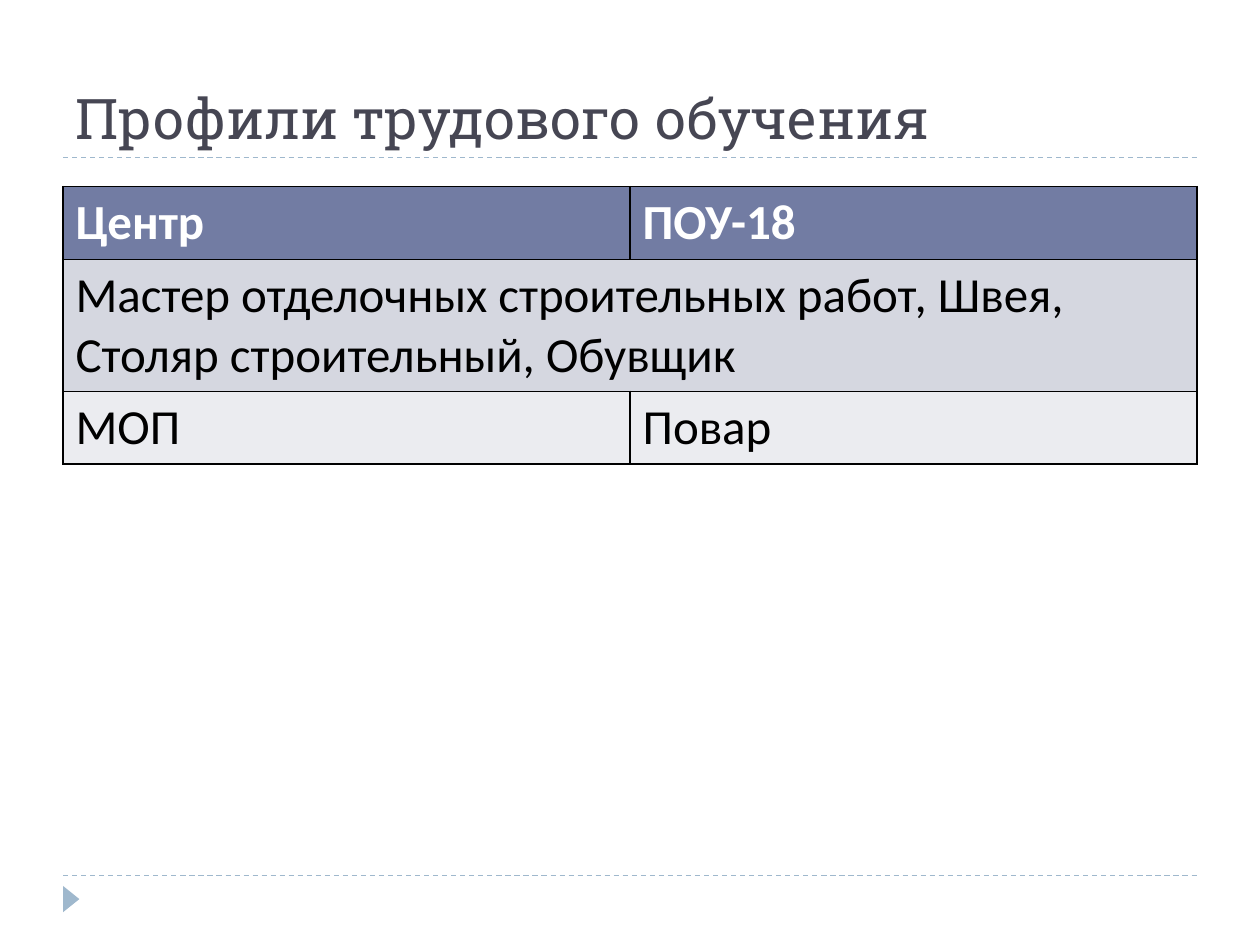
import pptx
import pptx.dml.color
import pptx.enum.dml
import pptx.enum.shapes
import pptx.enum.text
import pptx.oxml
import pptx.oxml.ns
import pptx.util
from pptx.util import Cm

ACCENT = "9FB8CD"
ROWS = [
    (["Центр", "ПОУ-18"], 1.47, "727CA3", "FFFFFF"),
    (["Мастер отделочных строительных работ, Швея, Столяр строительный, Обувщик"],
     2.66, "D5D7E0", "000000"),
    (["МОП", "Повар"], 1.46, "EBECF0", "000000"),
]


def paint(color_format, value):
    """Set a colour format to a hex colour."""
    color_format.rgb = pptx.dml.color.RGBColor.from_string(value)


def fill_solid(item, value):
    """Give a shape or a cell a plain fill."""
    item.fill.solid()
    paint(item.fill.fore_color, value)


def write(frame, text, font, size, color, bold=False):
    """Put one formatted paragraph in a text frame and return it."""
    frame.text = text
    para = frame.paragraphs[0]
    for span in para.runs:
        span.font.name = font
        span.font.size = pptx.util.Pt(size)
        span.font.bold = bold
        paint(span.font.color, color)
    return para


def add_rule(page, left, top, width):
    """Draw a dashed horizontal rule."""
    rule = page.shapes.add_connector(
        pptx.enum.shapes.MSO_CONNECTOR.STRAIGHT, Cm(left), Cm(top), Cm(left + width), Cm(top))
    paint(rule.line.color, ACCENT)
    rule.line.width = pptx.util.Pt(0.75)
    rule.line.dash_style = pptx.enum.dml.MSO_LINE.DASH
    rule._element.spPr.append(pptx.oxml.parse_xml(
        f"<a:effectLst {pptx.oxml.ns.nsdecls('a')}/>"))


def add_heading(page, left, top, width, height):
    """Place the bottom-anchored title with a rule under it."""
    box = page.shapes.add_textbox(Cm(left), Cm(top), Cm(width), Cm(height))
    frame = box.text_frame
    frame.word_wrap = True
    frame.vertical_anchor = pptx.enum.text.MSO_ANCHOR.BOTTOM
    write(frame, "Профили трудового обучения", "Roboto Slab", 32, "464653")
    add_rule(page, left, top + height, width)


def add_footer(page, left, top, width):
    """Place the bottom rule and the right-pointing marker below it."""
    add_rule(page, left, top, width)
    marker = page.shapes.add_shape(
        pptx.enum.shapes.MSO_SHAPE.ISOSCELES_TRIANGLE,
        Cm(left - 0.1), Cm(top + 0.31), Cm(0.53), Cm(0.33))
    marker.rotation = 90
    marker.shadow.inherit = False
    fill_solid(marker, ACCENT)
    marker.line.fill.background()


def add_borders(cell):
    """Outline a cell with thin black lines."""
    properties = cell._tc.get_or_add_tcPr()
    for index, side in enumerate(("lnL", "lnR", "lnT", "lnB")):
        properties.insert(index, pptx.oxml.parse_xml(
            f'<a:{side} {pptx.oxml.ns.nsdecls("a")} w="12700"><a:solidFill>'
            f'<a:srgbClr val="000000"/></a:solidFill></a:{side}>'))


def add_profiles(page, left, top, width):
    """Place the table of training profiles, merging rows with one entry."""
    height = sum(row[1] for row in ROWS)
    table = page.shapes.add_table(
        len(ROWS), 2, Cm(left), Cm(top), Cm(width), Cm(height)).table
    for row_index, (texts, row_height, fill, color) in enumerate(ROWS):
        table.rows[row_index].height = Cm(row_height)
        cells = [table.cell(row_index, column) for column in range(2)]
        if len(texts) == 1:
            cells[0].merge(cells[1])
        for cell in cells:
            fill_solid(cell, fill)
            add_borders(cell)
        for cell, text in zip(cells, texts):
            para = write(cell.text_frame, text, "Calibri", 28, color, row_index == 0)
            if row_index == 2:
                para.alignment = pptx.enum.text.PP_ALIGN.JUSTIFY


def main():
    """Build and save the deck."""
    deck = pptx.Presentation()
    deck.slide_width, deck.slide_height = Cm(25.4), Cm(19.05)
    page = deck.slides.add_slide(deck.slide_layouts[6])
    left, width = 1.27, 22.86
    add_footer(page, left, 17.65, width)
    add_heading(page, left, 0.43, width, 2.74)
    add_profiles(page, left, 3.76, width)
    deck.save("out.pptx")


if __name__ == "__main__":
    main()
